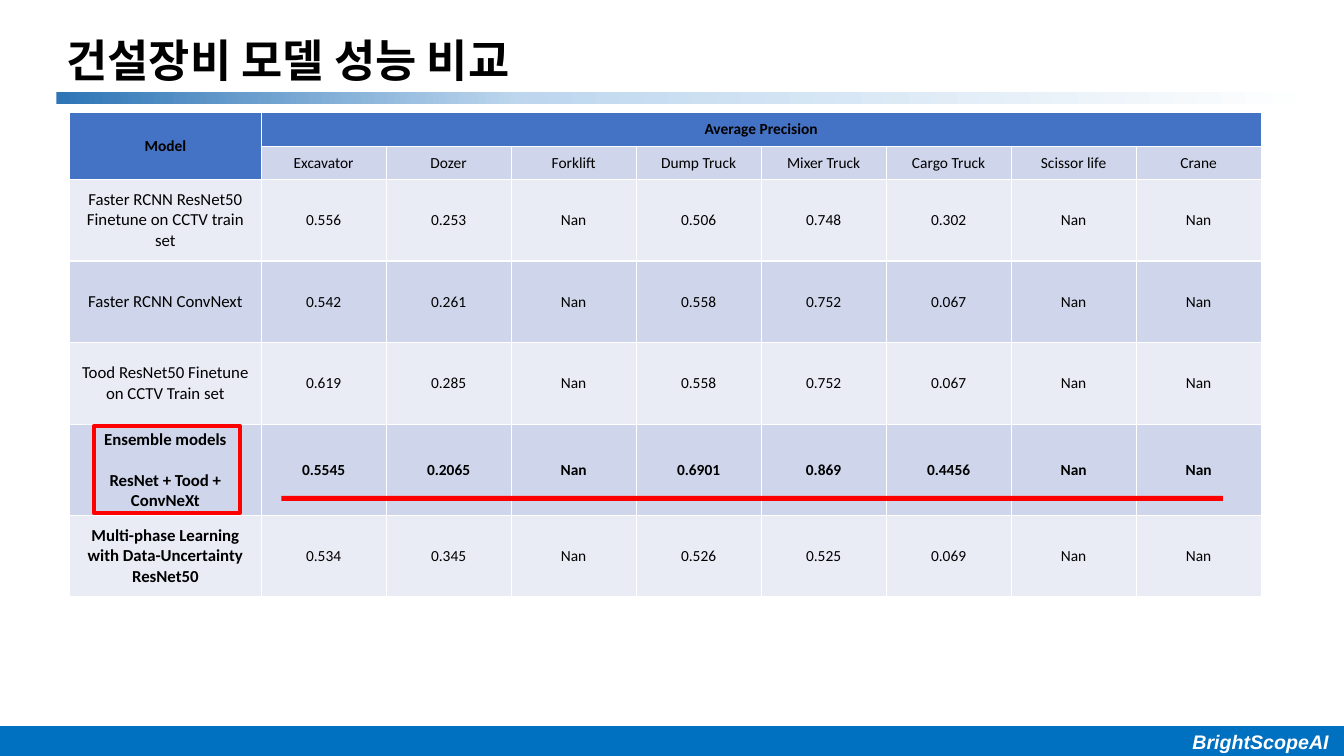
from copy import deepcopy
from dataclasses import dataclass
from typing import Any, Optional

from pptx import Presentation
from pptx.dml.color import RGBColor
from pptx.enum.shapes import MSO_SHAPE
from pptx.enum.text import MSO_ANCHOR, MSO_AUTO_SIZE, PP_ALIGN
from pptx.oxml.ns import qn
from pptx.util import Inches, Pt

HUES = {
    "black": "000000", "white": "FFFFFF", "red": "FF0000", "bar": "0070C0",
    "head": "4472C4", "dark": "CFD5EA", "light": "E9EBF5",
    "deep": "2E75B6", "pale": "BED7EE",
}


@dataclass
class Box:
    left: float
    top: float
    width: float
    height: float
    fill: Optional[str] = None
    line: Optional[str] = None
    weight: float = 0


@dataclass
class Model:
    name: list[str]
    scores: list[str]
    bold: bool = False
    strong: bool = False
    gap: float = 0


KINDS = ["Excavator", "Dozer", "Forklift", "Dump Truck", "Mixer Truck",
         "Cargo Truck", "Scissor life", "Crane"]
MODELS = [
    Model(["Faster RCNN ResNet50 Finetune on CCTV train set"],
          ["0.556", "0.253", "Nan", "0.506", "0.748", "0.302", "Nan", "Nan"]),
    Model(["Faster RCNN ConvNext"],
          ["0.542", "0.261", "Nan", "0.558", "0.752", "0.067", "Nan", "Nan"]),
    Model(["Tood ResNet50 Finetune on CCTV Train set"],
          ["0.619", "0.285", "Nan", "0.558", "0.752", "0.067", "Nan", "Nan"]),
    Model(["Ensemble models", "ResNet + Tood + ConvNeXt"],
          ["0.5545", "0.2065", "Nan", "0.6901", "0.869", "0.4456", "Nan", "Nan"],
          bold=True, strong=True, gap=14.65),
    Model(["Multi-phase Learning", "with Data-Uncertainty", "ResNet50"],
          ["0.534", "0.345", "Nan", "0.526", "0.525", "0.069", "Nan", "Nan"],
          bold=True),
]
BAND = Box(0.56, 0.91, 12.52, 0.12)
FOOT = Box(0, 7.21, 13.33, 0.29, "bar", "bar", 1)
MARKS = [Box(2.79, 4.92, 9.34, 0.05, "red"),
         Box(0.93, 4.23, 1.45, 0.86, line="red", weight=3)]


def hue(name: str) -> RGBColor:
    return RGBColor.from_string(HUES[name])


def format(item: Any, values: dict[str, Any]) -> None:
    for key, value in values.items():
        setattr(item, key, value)


def place(item: Any, box: Box) -> None:
    format(item, {key: Inches(getattr(box, key))
                  for key in ("left", "top", "width", "height")})


def draw(slide: Any, box: Box) -> Any:
    shape = slide.shapes.add_shape(MSO_SHAPE.RECTANGLE, 0, 0, 0, 0)
    place(shape, box)
    shape.shadow.inherit = False
    if box.fill:
        shape.fill.solid()
        shape.fill.fore_color.rgb = hue(box.fill)
    else:
        shape.fill.background()
    if box.line:
        shape.line.color.rgb = hue(box.line)
        shape.line.width = Pt(box.weight)
    else:
        shape.line.fill.background()
    return shape


def fade(shape: Any) -> None:
    shape.fill.gradient()
    shape.fill.gradient_angle = 0
    stops = shape.element.spPr.find(qn("a:gradFill")).find(qn("a:gsLst"))
    stops.append(deepcopy(stops[0]))
    marks = [(0, "deep"), (0.37, "pale"), (1, "white")]
    for stop, (spot, name) in zip(shape.fill.gradient_stops, marks):
        stop.position = spot
        stop.color.rgb = hue(name)


def write(frame: Any, lines: list[str], align: Any, font: dict[str, Any],
          color: str = "black", gap: float = 0) -> None:
    for i, line in enumerate(lines):
        para = frame.paragraphs[0] if i == 0 else frame.add_paragraph()
        para.alignment = align
        if i and gap:
            para.space_before = Pt(gap)
        run = para.add_run()
        run.text = line
        format(run.font, font)
        run.font.color.rgb = hue(color)


def enter(cell: Any, lines: list[str], size: float = 11,
          bold: bool = False, gap: float = 0) -> None:
    cell.vertical_anchor = MSO_ANCHOR.MIDDLE
    write(cell.text_frame, lines, PP_ALIGN.CENTER,
          {"name": "Calibri", "size": Pt(size), "bold": bold}, gap=gap)


def chart(slide: Any) -> None:
    grid = slide.shapes.add_table(
        len(MODELS) + 2, len(KINDS) + 1,
        Inches(0.69), Inches(1.12), Inches(11.8), Inches(4.8)).table
    for i, col in enumerate(grid.columns):
        col.width = Inches(1.24 if i else 1.9)
    for i, row in enumerate(grid.rows):
        row.height = Inches(0.33 if i < 2 else 0.81)
        for j, cell in enumerate(row.cells):
            head = i == 0 or (i == 1 and j == 0)
            cell.fill.solid()
            cell.fill.fore_color.rgb = hue(
                "head" if head else "dark" if i % 2 else "light")
    # Two-level header
    grid.cell(0, 0).merge(grid.cell(1, 0))
    grid.cell(0, 1).merge(grid.cell(0, len(KINDS)))
    enter(grid.cell(0, 0), ["Model"], bold=True)
    enter(grid.cell(0, 1), ["Average Precision"], bold=True)
    for j, kind in enumerate(KINDS, 1):
        enter(grid.cell(1, j), [kind])
    # Scores by model
    for i, model in enumerate(MODELS, 2):
        enter(grid.cell(i, 0), model.name, 12, model.bold, model.gap)
        for j, score in enumerate(model.scores, 1):
            enter(grid.cell(i, j), [score], bold=model.strong)


def main() -> None:
    deck = Presentation()
    format(deck, {"slide_width": Inches(13.33), "slide_height": Inches(7.5)})
    slide = deck.slides.add_slide(deck.slide_layouts[5])

    # Title band and footer
    fade(draw(slide, BAND))
    draw(slide, FOOT)
    note = slide.shapes.add_textbox(0, 0, 0, 0)
    place(note, Box(10.14, 7.21, 3.19, 0.29))
    format(note.text_frame, {
        "word_wrap": True, "vertical_anchor": MSO_ANCHOR.MIDDLE,
        "margin_right": Inches(0.15), "margin_top": 0, "margin_bottom": 0})
    write(note.text_frame, ["BrightScopeAI"], PP_ALIGN.RIGHT,
          {"name": "Arial", "size": Pt(14), "bold": True, "italic": True}, "white")

    # Title
    title = slide.shapes.title
    place(title, Box(0.56, 0.24, 9.38, 0.67))
    format(title.text_frame, {
        "word_wrap": True, "auto_size": MSO_AUTO_SIZE.NONE,
        "vertical_anchor": MSO_ANCHOR.BOTTOM})
    write(title.text_frame, ["건설장비 모델 성능 비교"], PP_ALIGN.LEFT,
          {"name": "Arial", "size": Pt(32), "bold": True})
    title.text_frame.paragraphs[0].line_spacing = 1.5

    # Table and red highlights
    chart(slide)
    for mark in MARKS:
        draw(slide, mark)
    deck.save("out.pptx")


if __name__ == "__main__":
    main()
